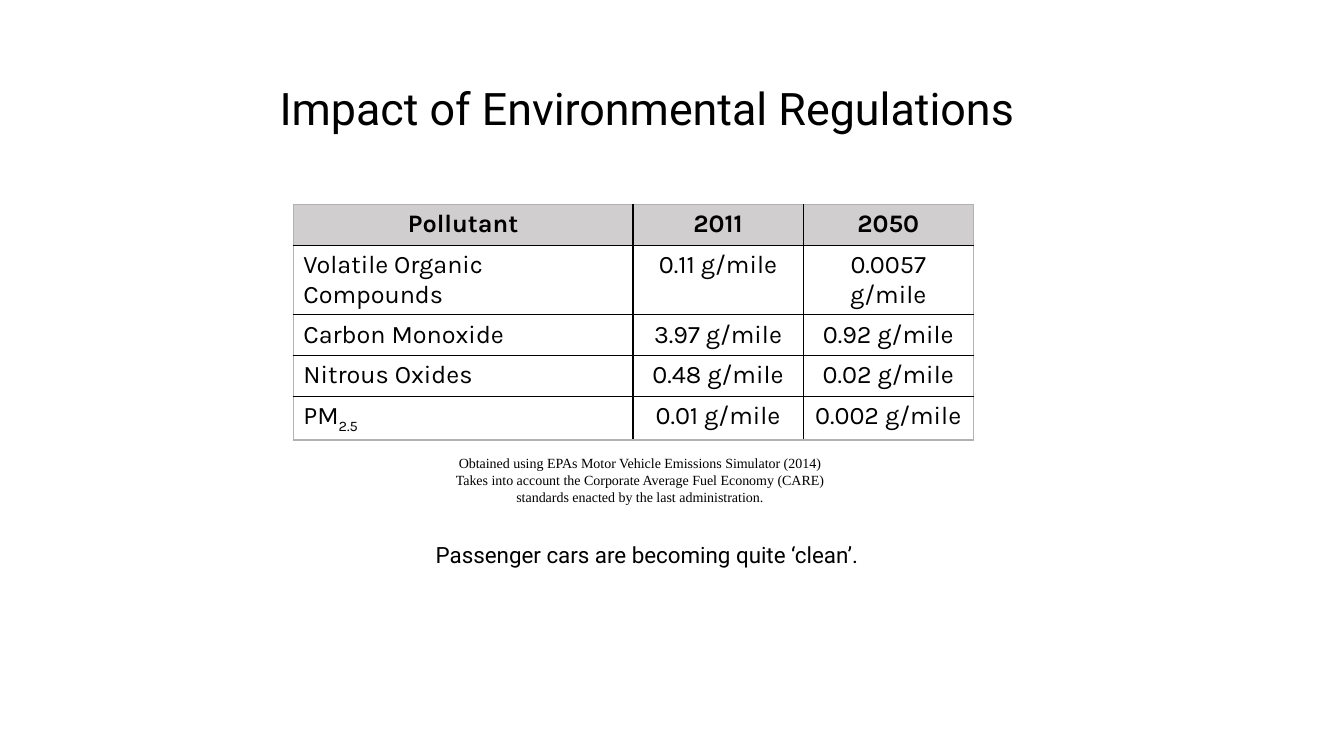
from lxml.etree import SubElement
from pptx import Presentation
from pptx.dml.color import RGBColor
from pptx.enum.text import MSO_ANCHOR as Anchor, MSO_AUTO_SIZE as AutoSize, PP_ALIGN as Align
from pptx.oxml.ns import qn
from pptx.util import Cm, Pt

COLORS = {"text": "000000", "header": "D0CECE", "inner": "000000", "outer": "B2B2B2"}

COLUMN_WIDTHS = [8.56, 4.29, 4.29]
ROW_HEIGHT = 1.03
EMISSIONS = [
    ["Pollutant", "2011", "2050"],
    ["Volatile Organic Compounds", "0.11 g/mile", "0.0057 g/mile"],
    ["Carbon Monoxide", "3.97 g/mile", "0.92 g/mile"],
    ["Nitrous Oxides", "0.48 g/mile", "0.02 g/mile"],
    [("PM", "2.5"), "0.01 g/mile", "0.002 g/mile"],
]
SOURCE_NOTE = [
    "Obtained using EPAs Motor Vehicle Emissions Simulator (2014)",
    "Takes into account the Corporate Average Fuel Economy (CARE) "
    "standards enacted by the last administration.",
]


def add_run(paragraph, text, font, size, bold=False, subscript=False):
    run = paragraph.add_run()
    run.text = text
    run.font.name = font
    run.font.size = Pt(size)
    run.font.bold = bold
    run.font.color.rgb = RGBColor.from_string(COLORS["text"])
    if subscript:
        run.font._element.set("baseline", "-25000")


def fill_frame(frame, texts, font, size, line_spacing=None, space_before=None):
    """Write centred paragraphs into a text frame."""
    frame.word_wrap = True
    for index, text in enumerate(texts):
        paragraph = frame.add_paragraph() if index else frame.paragraphs[0]
        paragraph.alignment = Align.CENTER
        paragraph.line_spacing = line_spacing
        paragraph.space_before = space_before
        add_run(paragraph, text, font, size)


def place(shape, left, top, width, height):
    shape.left, shape.top = Cm(left), Cm(top)
    shape.width, shape.height = Cm(width), Cm(height)


def add_title(slide, text):
    title = slide.shapes.title
    place(title, 2.57, 1.7, 27.48, 1.83)
    frame = title.text_frame
    frame.auto_size = AutoSize.NONE
    frame.vertical_anchor = Anchor.BOTTOM
    fill_frame(frame, [text], "Roboto", 32, line_spacing=0.9)


def add_text(slide, box, texts, font, size, **spacing):
    shape = slide.shapes.add_textbox(*map(Cm, box))
    fill_frame(shape.text_frame, texts, font, size, **spacing)


def set_borders(cell, edges):
    """Draw each side in the outer or inner colour; lines precede the fill."""
    properties = cell._tc.get_or_add_tcPr()
    for index, (side, is_outer) in enumerate(edges.items()):
        line = SubElement(properties, qn(f"a:ln{side}"), w=str(Pt(1)))
        solid = SubElement(line, qn("a:solidFill"))
        SubElement(solid, qn("a:srgbClr"), val=COLORS["outer" if is_outer else "inner"])
        properties.insert(index, line)


def add_emissions_table(slide):
    row_count, column_count = len(EMISSIONS), len(COLUMN_WIDTHS)
    table = slide.shapes.add_table(
        row_count, column_count, Cm(7.39), Cm(5.16),
        Cm(sum(COLUMN_WIDTHS)), Cm(ROW_HEIGHT * row_count)).table
    table.first_row = table.horz_banding = False
    for column, width in zip(table.columns, COLUMN_WIDTHS):
        column.width = Cm(width)

    for i, values in enumerate(EMISSIONS):
        table.rows[i].height = Cm(ROW_HEIGHT)
        for j, value in enumerate(values):
            cell = table.cell(i, j)
            is_header = i == 0
            if is_header:
                cell.fill.solid()
                cell.fill.fore_color.rgb = RGBColor.from_string(COLORS["header"])
            else:
                cell.fill.background()
            set_borders(cell, {"L": j == 0, "R": j == column_count - 1,
                               "T": i == 0, "B": i == row_count - 1})
            paragraph = cell.text_frame.paragraphs[0]
            paragraph.alignment = Align.CENTER if is_header or j else Align.LEFT
            # A pair holds the base text and its subscript
            parts = value if isinstance(value, tuple) else (value,)
            for position, part in enumerate(parts):
                add_run(paragraph, part, "Karla", 18, is_header, position > 0)


def main():
    presentation = Presentation()
    presentation.slide_width, presentation.slide_height = Cm(33.87), Cm(19.05)
    slide = presentation.slides.add_slide(presentation.slide_layouts[5])

    # Title and table
    add_title(slide, "Impact of Environmental Regulations")
    add_emissions_table(slide)

    # Source note and conclusion
    add_text(slide, (10.74, 11.33, 10.77, 1.96), SOURCE_NOTE, "Times New Roman", 10)
    add_text(slide, (9.6, 13.59, 13.41, 1.85),
             ["Passenger cars are becoming quite ‘clean’."], "Roboto", 16,
             line_spacing=0.9, space_before=Pt(10))

    presentation.save("out.pptx")


if __name__ == "__main__":
    main()
